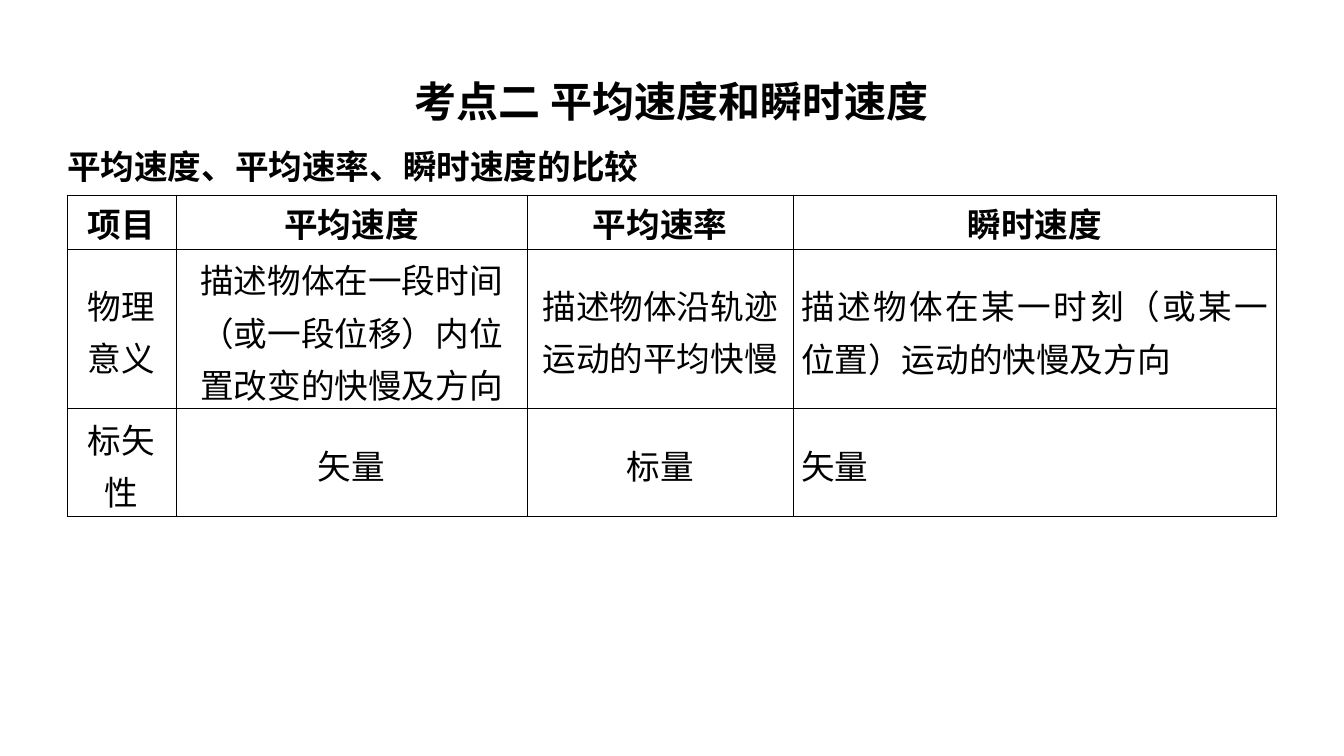
from lxml.etree import SubElement
from pptx import Presentation
from pptx.dml.color import RGBColor
from pptx.enum.text import MSO_ANCHOR, MSO_AUTO_SIZE, PP_ALIGN
from pptx.oxml.ns import qn
from pptx.util import Inches, Pt

# Content
TITLE = "考点二 平均速度和瞬时速度"
LEAD = "平均速度、平均速率、瞬时速度的比较"
HEADS = [["项目"], ["平均速度"], ["平均速率"], ["瞬时速度"]]
MEANING = [
    ["物理", "意义"],
    ["描述物体在一段时间", "（或一段位移）内位", "置改变的快慢及方向"],
    ["描述物体沿轨迹", "运动的平均快慢"],
    ["描述物体在某一时刻（或某一位置）运动的快慢及方向"],
]
KIND = [["标矢", "性"], ["矢量"], ["标量"], ["矢量"]]
ROWS = [HEADS, MEANING, KIND]

# Look
BLACK = RGBColor(0, 0, 0)
FONT = "Times New Roman"
LEFT, WIDTH = 67, 1209
COLS = [109, 351, 266, 483]
HIGHS = [54, 160, 108]
LAST = len(COLS) - 1


def px(n):
    return round(n * Inches(1) / 100.8)


def write(frame, lines, size=24, bold=False, align=PP_ALIGN.CENTER, gaps=(36,)):
    """Fill a frame with one paragraph per line; gaps are line heights in points."""
    for i, (line, gap) in enumerate(zip(lines, gaps)):
        para = frame.paragraphs[0] if i == 0 else frame.add_paragraph()
        para.text = line
        para.alignment = align
        para.line_spacing = Pt(gap)
        para.font.name = FONT
        para.font.size = Pt(size)
        para.font.bold = bold
        para.font.color.rgb = BLACK


def place(shape, top, high):
    shape.left, shape.top = px(LEFT), px(top)
    shape.width, shape.height = px(WIDTH), px(high)
    frame = shape.text_frame
    frame.auto_size = MSO_AUTO_SIZE.NONE
    frame.word_wrap = True
    frame.vertical_anchor = MSO_ANCHOR.TOP
    frame.margin_left = frame.margin_right = 0
    frame.margin_top = frame.margin_bottom = 0
    return frame


def frame_cell(cell):
    props = cell._tc.get_or_add_tcPr()
    for side in ("lnL", "lnR", "lnT", "lnB"):
        line = SubElement(props, qn(f"a:{side}"), w=str(Pt(0.75)))
        fill = SubElement(line, qn("a:solidFill"))
        SubElement(fill, qn("a:srgbClr"), val=str(BLACK))
    cell.fill.background()


deck = Presentation()
deck.slide_width, deck.slide_height = Inches(13.33), Inches(7.5)
slide = deck.slides.add_slide(deck.slide_layouts[5])

# Title and lead line
write(place(slide.shapes.title, 53, 115), [TITLE], size=30, bold=True, gaps=[52])
lead = slide.shapes.add_textbox(0, 0, px(WIDTH), px(52))
write(place(lead, 127, 52), [LEAD], bold=True, align=PP_ALIGN.LEFT, gaps=[42])

# Comparison table
table = slide.shapes.add_table(
    len(ROWS), len(COLS), px(LEFT), px(195), px(WIDTH), px(sum(HIGHS))
).table
table.horz_banding = False
for col, wide in zip(table.columns, COLS):
    col.width = px(wide)
for row, high in zip(table.rows, HIGHS):
    row.height = px(high)

for r, row in enumerate(ROWS):
    for c, lines in enumerate(row):
        cell = table.cell(r, c)
        frame_cell(cell)
        cell.vertical_anchor = MSO_ANCHOR.MIDDLE
        cell.margin_left = cell.margin_right = px(8)
        cell.margin_top = cell.margin_bottom = 0
        align, gaps = PP_ALIGN.CENTER, [38] * (len(lines) - 1) + [37]
        if r == 0:
            gaps = [36]
        elif c == LAST:
            align = PP_ALIGN.JUSTIFY if r == 1 else PP_ALIGN.LEFT
            gaps = [38] if r == 1 else [37]
        write(cell.text_frame, lines, bold=r == 0, align=align, gaps=gaps)

deck.save("out.pptx")
